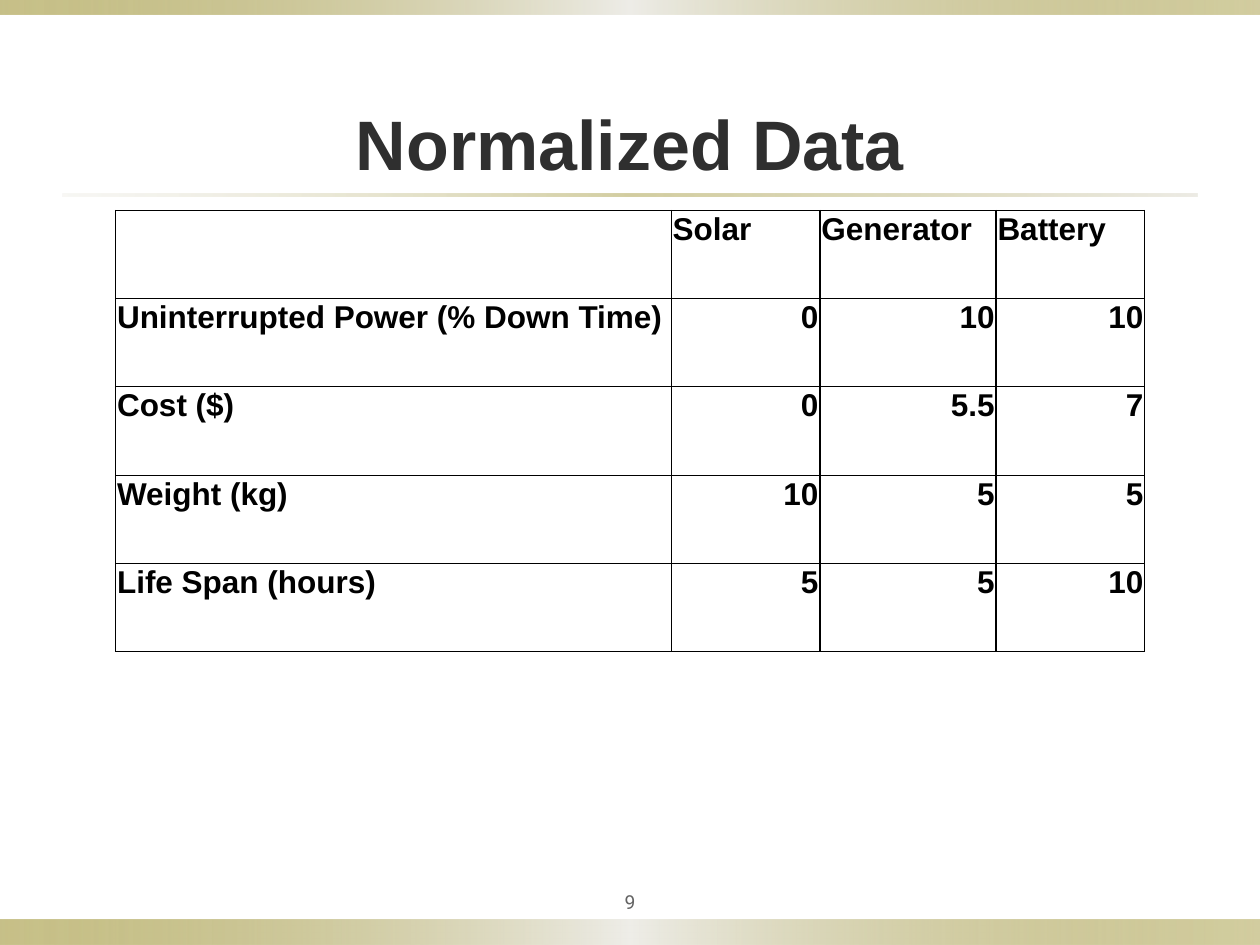
import pptx
import pptx.dml.color
import pptx.enum.shapes
import pptx.enum.text
import pptx.oxml
import pptx.oxml.ns
import pptx.util
from lxml import etree

Cm = pptx.util.Cm
Pt = pptx.util.Pt
qn = pptx.oxml.ns.qn
ALIGN = pptx.enum.text.PP_ALIGN
ANCHOR = pptx.enum.text.MSO_ANCHOR

BAND_STOPS = [(0, "918415", 50), (50, "EEEDE8", 100), (100, "918415", 40)]
RULE_STOPS = [(0, "DCD9CC", 20), (50, "918415", 40), (100, "DCD9CC", 50)]

SCORES = [
    ["", "Solar", "Generator", "Battery"],
    ["Uninterrupted Power (% Down Time)", "0", "10", "10"],
    ["Cost ($)", "0", "5.5", "7"],
    ["Weight (kg)", "10", "5", "5"],
    ["Life Span (hours)", "5", "5", "10"],
]
COLUMN_WIDTHS = [11.2, 3, 3.55, 3]
ROW_HEIGHT = 1.78


def color(hex_value):
    return pptx.dml.color.RGBColor.from_string(hex_value)


def add_run(paragraph, text, size, font, hex_value, bold=False):
    run = paragraph.add_run()
    run.text = text
    run.font.size = Pt(size)
    run.font.name = font
    run.font.color.rgb = color(hex_value)
    run.font.bold = bold


def add_gradient_bar(slide, left, top, width, height, stops):
    """Add a borderless bar; stops hold position, colour and opacity in percent."""
    bar = slide.shapes.add_shape(pptx.enum.shapes.MSO_SHAPE.RECTANGLE,
                                 Cm(left), Cm(top), Cm(width), Cm(height))
    bar.shadow.inherit = False
    bar.line.fill.background()
    bar.fill.gradient()
    bar.fill.gradient_angle = 0
    stop_list = bar.fill._fill._gradFill.find(qn("a:gsLst"))
    for sample_stop in list(stop_list):
        stop_list.remove(sample_stop)
    for position, hex_value, opacity in stops:
        stop = etree.SubElement(stop_list, qn("a:gs"), pos=str(position * 1000))
        tint = etree.SubElement(stop, qn("a:srgbClr"), val=hex_value)
        etree.SubElement(tint, qn("a:alpha"), val=str(opacity * 1000))


def add_label(slide, box, text, anchor, inset, **style):
    frame = slide.shapes.add_textbox(*map(Cm, box)).text_frame
    frame.word_wrap = True
    frame.vertical_anchor = anchor
    frame.margin_left = frame.margin_right = Cm(inset)
    frame.margin_top = frame.margin_bottom = Cm(inset)
    paragraph = frame.paragraphs[0]
    paragraph.alignment = ALIGN.CENTER
    add_run(paragraph, text, **style)


def set_borders(cell, hex_value, width):
    properties = cell._tc.get_or_add_tcPr()
    for index, side in enumerate(("a:lnL", "a:lnR", "a:lnT", "a:lnB")):
        border = etree.Element(qn(side), w=str(Pt(width)))
        fill = etree.SubElement(border, qn("a:solidFill"))
        etree.SubElement(fill, qn("a:srgbClr"), val=hex_value)
        properties.insert(index, border)


def add_score_table(slide, left, top):
    table = slide.shapes.add_table(
        len(SCORES), len(COLUMN_WIDTHS), Cm(left), Cm(top),
        Cm(sum(COLUMN_WIDTHS)), Cm(ROW_HEIGHT * len(SCORES))).table
    for column, width in zip(table.columns, COLUMN_WIDTHS):
        column.width = Cm(width)
    for row_index, scores in enumerate(SCORES):
        table.rows[row_index].height = Cm(ROW_HEIGHT)
        for column_index, text in enumerate(scores):
            cell = table.cell(row_index, column_index)
            cell.fill.background()
            set_borders(cell, "000000", 0.75)
            cell.margin_left = cell.margin_right = cell.margin_top = Cm(0.03)
            cell.margin_bottom = 0
            if not text:
                continue
            paragraph = cell.text_frame.paragraphs[0]
            is_score = row_index > 0 and column_index > 0
            paragraph.alignment = ALIGN.RIGHT if is_score else ALIGN.LEFT
            add_run(paragraph, text, 18, "Arial", "000000", bold=True)


def main():
    presentation = pptx.Presentation()
    presentation.slide_width = Cm(25.4)
    presentation.slide_height = Cm(19.05)
    slide = presentation.slides.add_slide(presentation.slide_layouts[6])

    add_gradient_bar(slide, 0, 18.54, 25.4, 0.51, BAND_STOPS)
    add_gradient_bar(slide, 0, 0, 25.4, 0.3, BAND_STOPS)
    add_gradient_bar(slide, 1.27, 3.91, 22.86, 0.05, RULE_STOPS)
    add_label(slide, (1.27, 1.73, 22.86, 2.24), "Normalized Data", ANCHOR.BOTTOM, 0.25,
              size=40, font="Arial", hex_value="2F2F2F", bold=True)
    add_label(slide, (11.43, 17.78, 2.54, 0.79), "9", ANCHOR.MIDDLE, 0.13,
              size=11, font="Roboto", hex_value="636363")
    add_score_table(slide, 2.33, 4.24)

    presentation.save("out.pptx")


if __name__ == "__main__":
    main()
